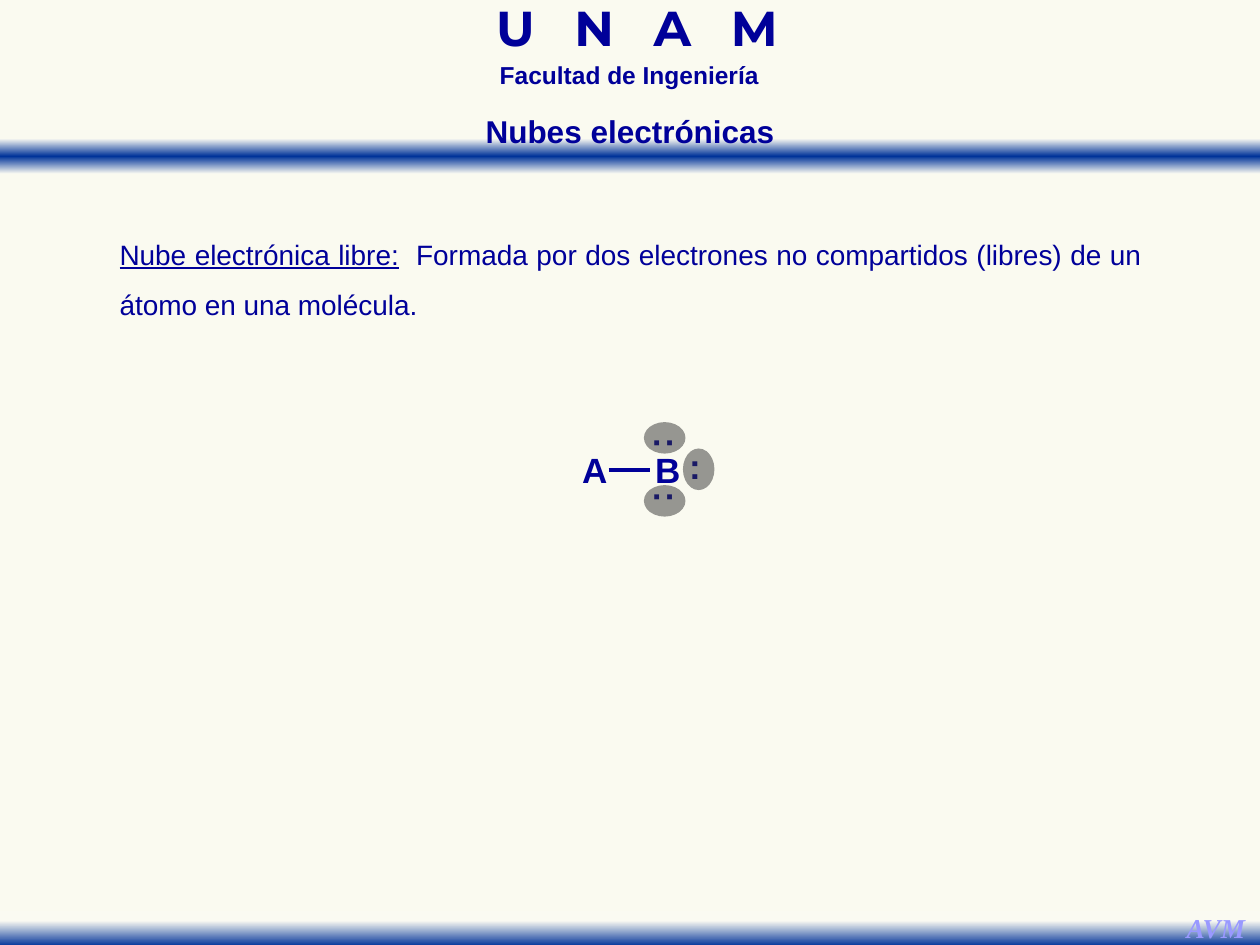
from lxml import etree
from pptx import Presentation
from pptx.dml.color import RGBColor
from pptx.enum.shapes import MSO_CONNECTOR, MSO_SHAPE
from pptx.enum.text import MSO_ANCHOR, PP_ALIGN
from pptx.oxml import parse_xml
from pptx.oxml.ns import nsdecls, qn
from pptx.util import Inches, Pt

RECTANGLE, OVAL = MSO_SHAPE.RECTANGLE, MSO_SHAPE.OVAL
STRAIGHT = MSO_CONNECTOR.STRAIGHT
CENTER, JUSTIFY = PP_ALIGN.CENTER, PP_ALIGN.JUSTIFY
TOP = MSO_ANCHOR.TOP
CREAM, BLUE, NAVY, LILAC, GRAY = "FAFAF2", "003399", "000099", "9999FF", "333333"


def color(hex_string):
    return RGBColor.from_string(hex_string)


def write(box, text, size, font="Arial", ink=NAVY, bold=True, align=CENTER, wrap=False):
    """Fill a box with one paragraph and return that paragraph."""
    frame = box.text_frame
    frame.text = text
    frame.word_wrap = wrap
    frame.vertical_anchor = TOP
    paragraph = frame.paragraphs[0]
    paragraph.alignment = align
    for run in paragraph.runs:
        run.font.name, run.font.size, run.font.bold = font, Pt(size), bold
        run.font.color.rgb = color(ink)
    return paragraph


prs = Presentation()
prs.slide_width, prs.slide_height = Inches(10), Inches(7.5)
slide = prs.slides.add_slide(prs.slide_layouts[5])
shapes = slide.shapes
slide.background.fill.solid()
slide.background.fill.fore_color.rgb = color("FAFAF0")

# Gradient bands across the header and the foot
bands = [
    (1.1, [(0, CREAM), (50, BLUE), (100, CREAM)]),
    (7.23, [(28, CREAM), (100, BLUE)]),
]
for top, stops in bands:
    band = shapes.add_shape(RECTANGLE, 0, Inches(top), Inches(10), Inches(0.28))
    band.shadow.inherit = False
    band.line.fill.background()
    stop_xml = "".join(
        f'<a:gs pos="{position * 1000}"><a:srgbClr val="{shade}"/></a:gs>'
        for position, shade in stops
    )
    band._element.spPr.find(qn("a:prstGeom")).addnext(parse_xml(
        f'<a:gradFill {nsdecls("a")} rotWithShape="1"><a:gsLst>{stop_xml}</a:gsLst>'
        '<a:lin ang="5400000" scaled="0"/></a:gradFill>'
    ))

# Institution and author initials; the wide letters use character spacing
university = shapes.add_textbox(Inches(3.1), Inches(0.06), Inches(3.91), Inches(0.43))
heading = write(university, "U N A M", 28, font="Montserrat", wrap=True)
heading.line_spacing = 0.7
heading.runs[0].font._element.set("spc", "740")

faculty = shapes.add_textbox(Inches(3.21), Inches(0.49), Inches(3.57), Inches(0.27))
write(faculty, "Facultad de Ingeniería", 14, wrap=True).line_spacing = 0.7

initials = shapes.add_textbox(Inches(9.31), Inches(7.18), Inches(0.68), Inches(0.37))
signature = write(initials, "AVM", 15.6, font="Times New Roman", ink=LILAC)
signature.runs[0].font.italic = True

# Title, brought in front of the header band
title = shapes.title
title.left, title.top = Inches(3.74), Inches(0.84)
title.width, title.height = Inches(2.52), Inches(0.4)
write(title, "Nubes electrónicas", 18)
shapes._spTree.append(title._element)

# Definition with its term underlined
definition = shapes.add_textbox(Inches(0.85), Inches(1.7), Inches(8.31), Inches(0.86))
sentence = write(definition, "Nube electrónica libre:", 16, bold=False,
                 align=JUSTIFY, wrap=True)
sentence.line_spacing = 1.5
sentence.runs[0].font.underline = True
meaning = sentence.add_run()
meaning.text = "  Formada por dos electrones no compartidos (libres) de un átomo en una molécula."
meaning.font.name, meaning.font.size = "Arial", Pt(16)
meaning.font.bold = meaning.font.underline = False
meaning.font.color.rgb = color(NAVY)

# Molecule: two atoms and the bond between them
for symbol, left in [("A", 4.62), ("B", 5.2)]:
    atom = shapes.add_textbox(Inches(left), Inches(3.56), Inches(0.2), Inches(0.33))
    frame = atom.text_frame
    frame.margin_left = frame.margin_right = frame.margin_top = frame.margin_bottom = 0
    write(atom, symbol, 20, align=JUSTIFY)

bond = shapes.add_connector(STRAIGHT, Inches(4.83), Inches(3.73), Inches(5.16), Inches(3.73))
bond.line.color.rgb = color(NAVY)
bond.line.width = Pt(2.5)
etree.SubElement(bond._element.spPr, qn("a:effectLst"))

# Free electron pairs of B: right, below, above
for left, top, angle in [(5.37, 3.48, 0), (5.16, 3.73, 90), (5.16, 3.3, 90)]:
    pair = shapes.add_textbox(Inches(left), Inches(top), Inches(0.29), Inches(0.43))
    pair.rotation = angle
    write(pair, ":", 20, align=JUSTIFY)

# Translucent clouds over the pairs: above, right, below
for left, top, angle in [(5.15, 3.31, 90), (5.42, 3.56, 0), (5.15, 3.81, 90)]:
    cloud = shapes.add_shape(OVAL, Inches(left), Inches(top), Inches(0.25), Inches(0.33))
    cloud.rotation = angle
    cloud.shadow.inherit = False
    cloud.line.fill.background()
    cloud.fill.solid()
    cloud.fill.fore_color.rgb = color(GRAY)
    shade = cloud._element.spPr.find(qn("a:solidFill")).find(qn("a:srgbClr"))
    etree.SubElement(shade, qn("a:alpha"), val="50000")

prs.save("out.pptx")
